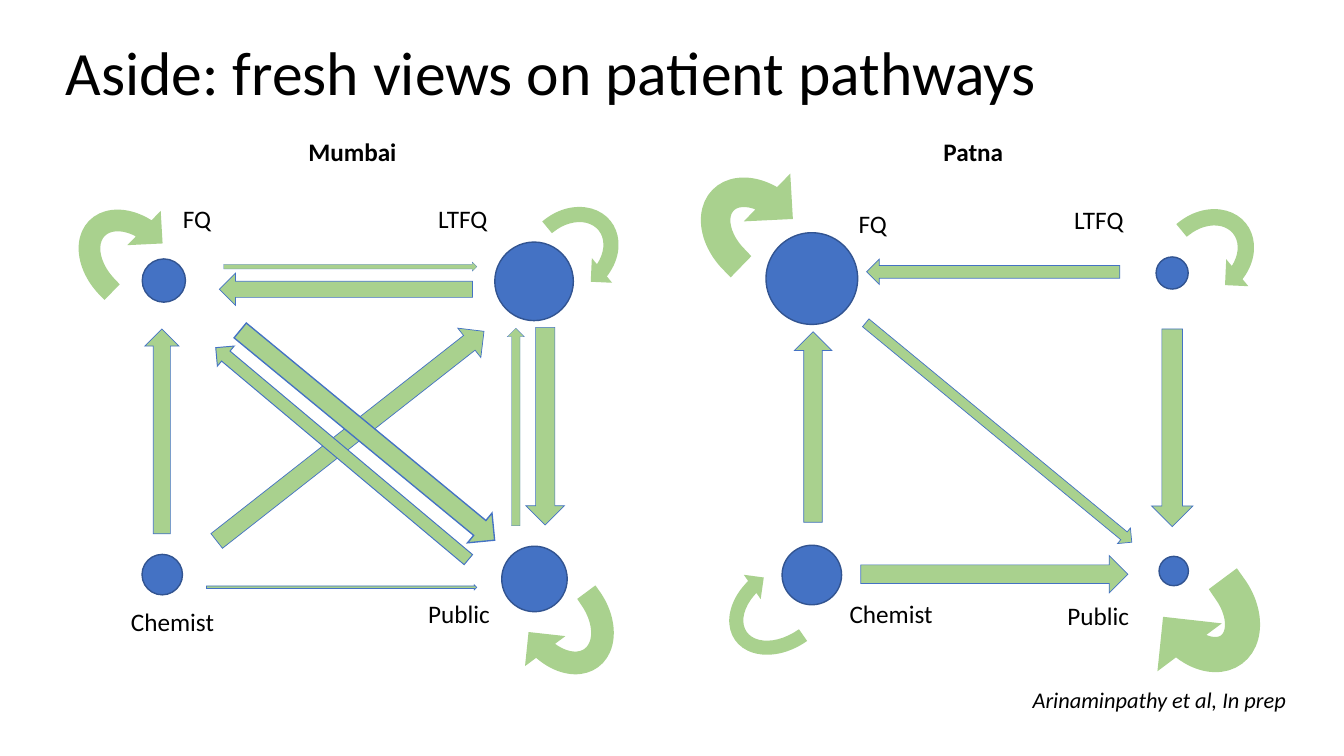
from lxml.etree import SubElement
from pptx import Presentation
from pptx.dml.color import RGBColor
from pptx.enum.shapes import MSO_SHAPE as Shape
from pptx.enum.text import MSO_ANCHOR as Anchor, MSO_AUTO_SIZE as AutoSize, PP_ALIGN as Align
from pptx.oxml.ns import qn
from pptx.util import Cm, Pt

TITLE = "Aside: fresh views on patient pathways"
CITATION = "Arinaminpathy et al, In prep"
BLUE, NAVY, GREEN, BLACK = "4472C4", "325491", "A9D18E", "000000"
LABEL_WIDTHS = {"FQ": 1.24, "LTFQ": 1.78, "Chemist": 2.64, "Public": 2.08}
LABEL_HEIGHT = 1.02
LOOP_WIDTH = 2.34

# heading: text, centre x, width
# providers: name, circle (x, y, diameter), label (x, y)
# loops: x, y, height, angle, line width
# flows: x, y, length, thickness, angle, line width
CITIES = [
    {
        "heading": ("Mumbai", 8.89, 2.74),
        "providers": [
            ("FQ", (4.13, 7.07, 1.09), (4.98, 5.51)),
            ("LTFQ", (13.46, 7.09, 1.98), (11.68, 5.51)),
            ("Chemist", (4.09, 14.48, 1.02), (4.37, 15.67)),
            ("Public", (13.47, 14.59, 1.65), (11.58, 15.47)),
        ],
        "loops": [
            (3.35, 6.64, 3.12, 314.3, 7.3),
            (14.38, 6.38, 2.79, 50.7, 2.57),
            (14.15, 15.56, 3.12, 143.5, 8.03),
        ],
        "flows": [
            (8.83, 10.99, 8.56, 0.94, 321.9, 0.5),
            (9.26, 10.97, 8.31, 0.97, 39.5, 0.96),
            (13.74, 10.74, 4.98, 0.97, 90, 0.5),
            (8.72, 7.29, 6.38, 0.81, 180, 0.5),
            (8.61, 14.8, 6.81, 0.13, 0, 0.5),
            (4.08, 10.87, 5.16, 0.86, 270, 0.5),
            (8.62, 11.43, 8.31, 0.66, 220, 0.67),
            (13, 10.76, 4.98, 0.43, 270, 0.17),
            (8.83, 6.72, 6.38, 0.23, 0, 0.17),
        ],
    },
    {
        "heading": ("Patna", 24.54, 2.03),
        "providers": [
            ("FQ", (20.46, 7.02, 2.31), (22.01, 5.64)),
            ("LTFQ", (29.54, 6.88, 0.81), (27.71, 5.54)),
            ("Chemist", (20.46, 14.49, 1.5), (22.48, 15.47)),
            ("Public", (29.58, 14.39, 0.74), (27.69, 15.52)),
        ],
        "loops": [
            (19.13, 5.93, 3.12, 314.3, 12.9),
            (30.38, 6.45, 2.79, 50.7, 3.42),
            (19.71, 15.3, 3.12, 235.3, 1.9),
            (30.28, 15.35, 3.12, 143.5, 16.9),
        ],
        "flows": [
            (25.17, 10.9, 8.69, 0.51, 39.5, 0.5),
            (29.54, 10.78, 4.98, 1.04, 90, 0.5),
            (25.03, 6.85, 6.38, 0.64, 180, 0.5),
            (25.06, 14.47, 6.73, 0.94, 0, 0.5),
            (20.49, 10.76, 4.8, 0.94, 270, 0.5),
        ],
    },
]


def color(value):
    return RGBColor.from_string(value)


def centred(x, y, width, height):
    return Cm(x - width / 2), Cm(y - height / 2), Cm(width), Cm(height)


def write(frame, text, size=18, bold=False, italic=False, spacing=None):
    para = frame.paragraphs[0]
    para.alignment = Align.LEFT
    para.line_spacing = spacing
    span = para.add_run()
    span.text = text
    font = span.font
    font.name, font.size, font.bold, font.italic = "Calibri", Pt(size), bold, italic
    font.color.rgb = color(BLACK)


def add_label(page, text, x, y, width, height=LABEL_HEIGHT, **style):
    box = page.shapes.add_textbox(*centred(x, y, width, height))
    box.text_frame.word_wrap = False
    box.text_frame.auto_size = AutoSize.SHAPE_TO_FIT_TEXT
    write(box.text_frame, text, **style)


def add_figure(page, kind, x, y, width, height, fill, line, weight, angle=0):
    figure = page.shapes.add_shape(kind, *centred(x, y, width, height))
    figure.shadow.inherit = False
    figure.rotation = angle
    figure.fill.solid()
    figure.fill.fore_color.rgb = color(fill)
    figure.line.color.rgb = color(line)
    figure.line.width = Pt(weight)
    outline = figure.line.color and figure.element.spPr.find(qn("a:ln"))
    SubElement(outline, qn("a:miter"), lim="800000")


def add_city(page, city):
    for x, y, height, angle, weight in city["loops"]:
        add_figure(page, Shape.CIRCULAR_ARROW, x, y, LOOP_WIDTH, height,
                   GREEN, GREEN, weight, angle)
    for x, y, length, thickness, angle, weight in city["flows"]:
        add_figure(page, Shape.RIGHT_ARROW, x, y, length, thickness,
                   GREEN, BLUE, weight, angle)
    for name, (x, y, diameter), label_centre in city["providers"]:
        add_figure(page, Shape.OVAL, x, y, diameter, diameter, BLUE, NAVY, 1)
        add_label(page, name, *label_centre, LABEL_WIDTHS[name])
    heading, x, width = city["heading"]
    add_label(page, heading, x, 3.81, width, bold=True)


def main():
    deck = Presentation()
    deck.slide_width, deck.slide_height = Cm(33.87), Cm(19.05)
    page = deck.slides.add_slide(deck.slide_layouts[5])
    title = page.shapes.title
    title.left, title.top, title.width, title.height = Cm(1.4), Cm(0.76), Cm(28.42), Cm(2.31)
    title.text_frame.vertical_anchor = Anchor.MIDDLE
    title.text_frame.auto_size = AutoSize.NONE
    write(title.text_frame, TITLE, size=44, spacing=0.9)
    for city in CITIES:
        add_city(page, city)
    add_label(page, CITATION, 29.27, 17.64, 6.99, 0.94, size=16, italic=True)
    deck.save("out.pptx")


if __name__ == "__main__":
    main()
